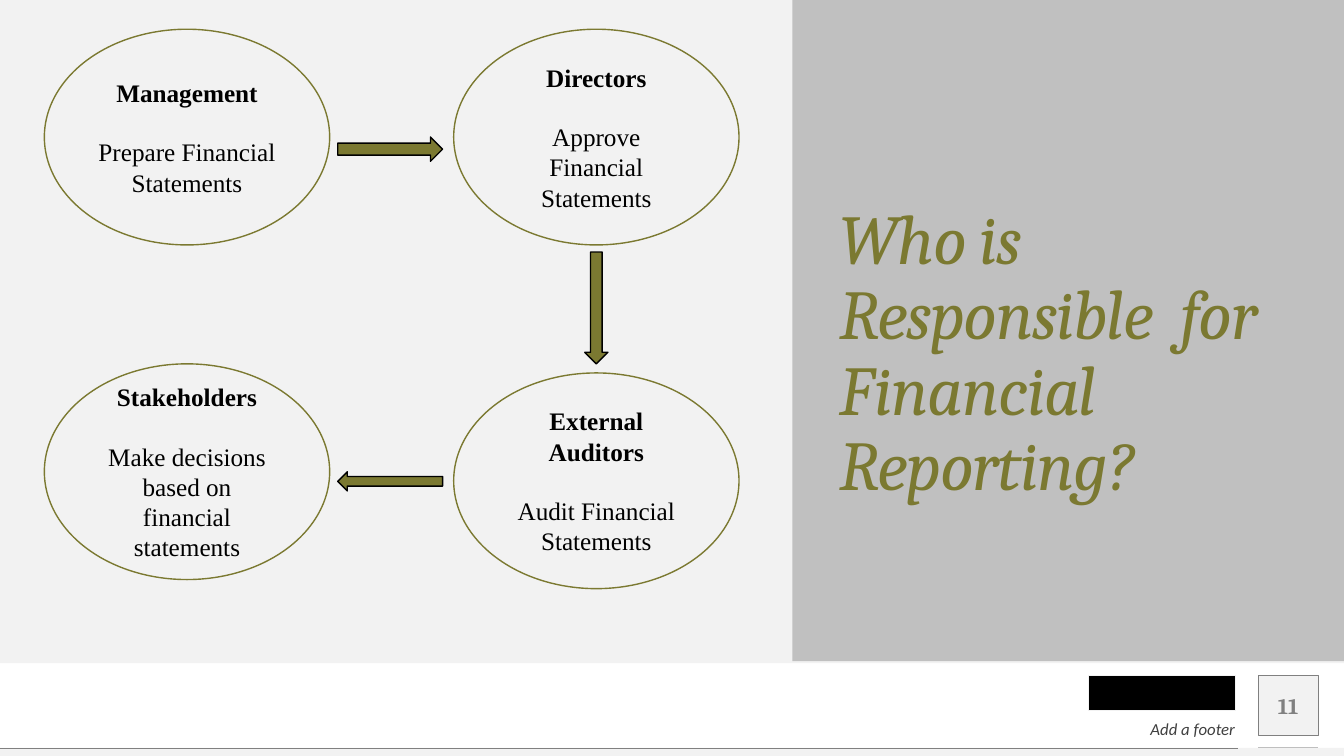
import pptx
import pptx.util
import pptx.dml.color
import pptx.enum.shapes
import pptx.enum.text
import pptx.oxml.ns
import lxml.etree

Inches = pptx.util.Inches
Pt = pptx.util.Pt
RGBColor = pptx.dml.color.RGBColor
SHAPE = pptx.enum.shapes.MSO_SHAPE
ALIGN = pptx.enum.text.PP_ALIGN
ANCHOR = pptx.enum.text.MSO_ANCHOR
qn = pptx.oxml.ns.qn

OLIVE = RGBColor(0x7B, 0x79, 0x31)
PALE = RGBColor(0xF2, 0xF2, 0xF2)
SILVER = RGBColor(0xBF, 0xBF, 0xBF)
GRAY = RGBColor(0x80, 0x80, 0x80)
CHARCOAL = RGBColor(0x40, 0x40, 0x40)
BLACK = RGBColor(0, 0, 0)

OVAL_SIZE = (2.83, 2.14)
LEFT_COLUMN, RIGHT_COLUMN = 0.44, 4.5
ROLES = [
    (LEFT_COLUMN, 0.29, "Management", "Prepare Financial Statements"),
    (RIGHT_COLUMN, 0.29, "Directors", "Approve Financial Statements"),
    (RIGHT_COLUMN, 3.7, "External Auditors", "Audit Financial Statements"),
    (LEFT_COLUMN, 3.61, "Stakeholders", "Make decisions based on financial statements"),
]
FLOW_ARROWS = [
    (SHAPE.RIGHT_ARROW, (3.35, 1.36, 1.04, 0.24)),
    (SHAPE.DOWN_ARROW, (5.8, 2.5, 0.23, 1.11)),
    (SHAPE.LEFT_ARROW, (3.35, 4.68, 1.04, 0.19)),
]


def add_block(slide, kind, box, fill, line=None, width=1):
    block = slide.shapes.add_shape(kind, *map(Inches, box))
    block.shadow.inherit = False
    block.fill.solid()
    block.fill.fore_color.rgb = fill
    if line is None:
        block.line.fill.background()
    else:
        block.line.color.rgb = line
        block.line.width = Pt(width)
    return block


def add_rule(slide, left, right, top, color, width):
    rule = slide.shapes.add_connector(
        pptx.enum.shapes.MSO_CONNECTOR.STRAIGHT,
        Inches(left), Inches(top), Inches(right), Inches(top))
    rule.line.color.rgb = color
    rule.line.width = Pt(width)
    lxml.etree.SubElement(rule._element.spPr, qn("a:effectLst"))


def set_frame(frame, anchor, insets):
    frame.word_wrap = True
    frame.vertical_anchor = anchor
    (frame.margin_left, frame.margin_top,
     frame.margin_right, frame.margin_bottom) = map(Inches, insets)


def style(paragraph, font_name, size, color, align, bold=False, italic=False):
    paragraph.alignment = align
    for run in paragraph.runs:
        run.font.name = font_name
        run.font.size = Pt(size)
        run.font.color.rgb = color
        run.font.bold = bold
        run.font.italic = italic


def add_label(slide, box, text, anchor, *text_style, **emphasis):
    frame = slide.shapes.add_textbox(*map(Inches, box)).text_frame
    set_frame(frame, anchor, (0, 0, 0, 0))
    frame.text = text
    style(frame.paragraphs[0], *text_style, **emphasis)


def add_role(slide, left, top, role, duty):
    oval = add_block(slide, SHAPE.OVAL, (left, top, *OVAL_SIZE), PALE, OLIVE)
    frame = oval.text_frame
    set_frame(frame, ANCHOR.MIDDLE, (0.1, 0.05, 0.1, 0.05))
    heading = frame.paragraphs[0]
    heading.text = role
    style(heading, "Times New Roman", 18, BLACK, ALIGN.CENTER, bold=True)
    task = frame.add_paragraph()
    task.text = duty
    task.space_before = Pt(21)
    style(task, "Times New Roman", 18, BLACK, ALIGN.CENTER)


def add_title(slide, text):
    panel = add_block(slide, SHAPE.RECTANGLE, (7.86, 0, 5.47, 6.56), GRAY)
    tint = panel._element.spPr.find(qn("a:solidFill")).find(qn("a:srgbClr"))
    lxml.etree.SubElement(tint, qn("a:alpha"), val="43000")
    frame = panel.text_frame
    set_frame(frame, ANCHOR.BOTTOM, (0.47, 0.08, 0.31, 1.54))
    frame.text = text
    title = frame.paragraphs[0]
    title.line_spacing = 0.9
    style(title, "Cambria", 50, OLIVE, ALIGN.LEFT, italic=True)
    title.runs[0]._r.get_or_add_rPr().set("spc", "-100")


def add_footer(slide):
    add_block(slide, SHAPE.RECTANGLE, (12.48, 6.7, 0.59, 0.59), PALE, GRAY, 0.25)
    add_block(slide, SHAPE.RECTANGLE, (0, 7.42, 13.33, 0.08), PALE)
    add_rule(slide, 12.48, 13.07, 7.41, SILVER, 0.5)
    add_rule(slide, 0, 12.28, 7.42, GRAY, 0.5)
    add_block(slide, SHAPE.RECTANGLE, (10.8, 6.7, 1.45, 0.35), BLACK, PALE, 0.75)
    add_label(slide, (12.48, 6.8, 0.59, 0.4), "11", ANCHOR.MIDDLE,
              "Cambria", 16, GRAY, ALIGN.CENTER, bold=True)
    add_label(slide, (7.75, 7.1, 4.5, 0.23), "Add a footer", ANCHOR.BOTTOM,
              "Calibri", 12, CHARCOAL, ALIGN.RIGHT, italic=True)


def main():
    presentation = pptx.Presentation()
    presentation.slide_width = Inches(13.33)
    presentation.slide_height = Inches(7.5)
    slide = presentation.slides.add_slide(presentation.slide_layouts[6])
    add_footer(slide)
    add_block(slide, SHAPE.RECTANGLE, (0, 0, 13.33, 6.58), PALE)
    add_title(slide, "Who is Responsible  for Financial Reporting?")
    for role in ROLES:
        add_role(slide, *role)
    for kind, box in FLOW_ARROWS:
        add_block(slide, kind, box, OLIVE, BLACK)
    presentation.save("out.pptx")


if __name__ == "__main__":
    main()
